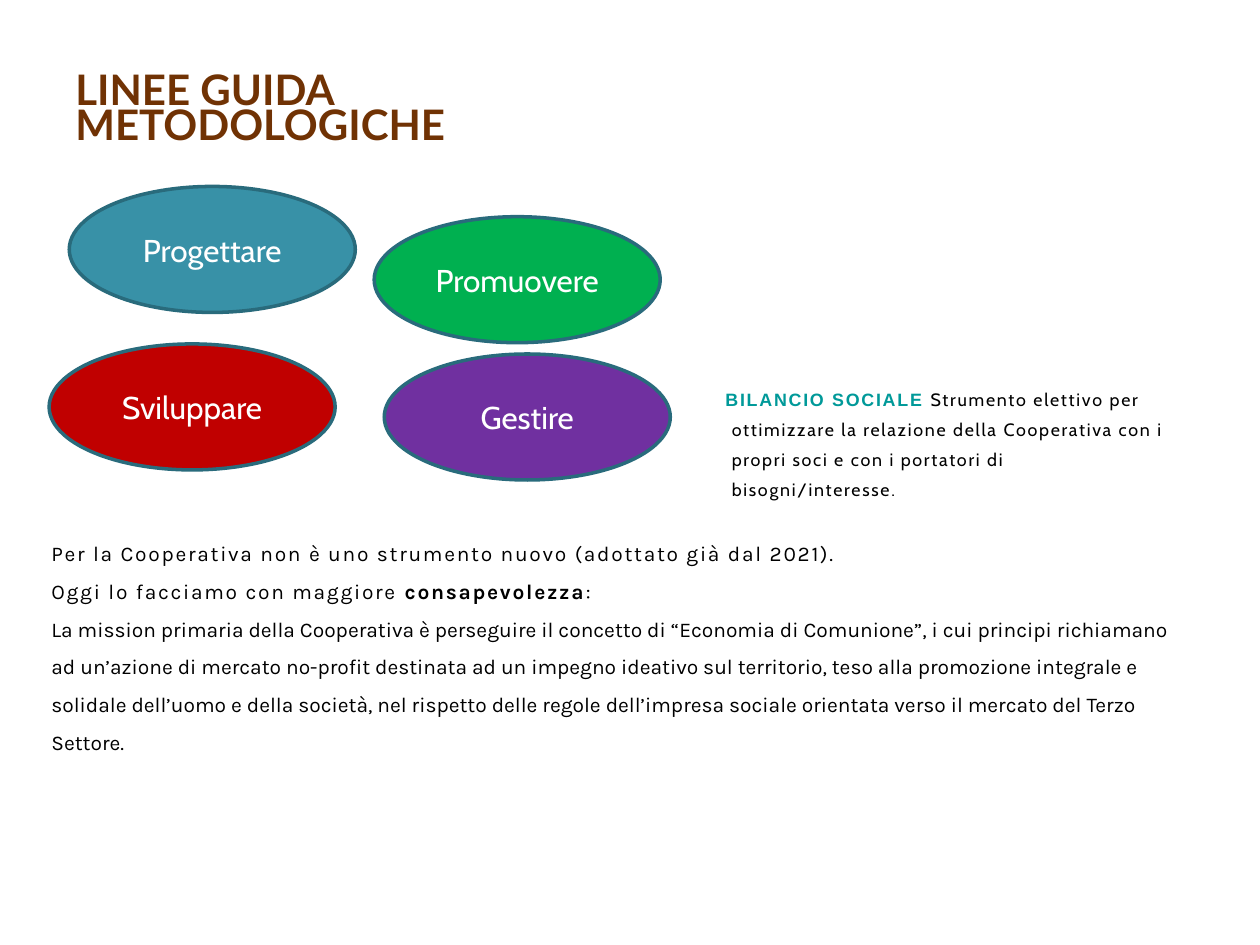
import pptx
import pptx.dml.color
import pptx.enum.shapes
import pptx.enum.text
import pptx.util

COLORS = {
    "title": "703204", "accent": "009999", "body": "000000", "label": "FFFFFF",
    "outline": "296B7C", "blue": "3891A7", "green": "00B050",
    "red": "C00000", "purple": "7030A0",
}
WIDTH, HEIGHT = 10, 7.5
COLUMNS, ROWS = 100, 75
OVAL_SIZE = (22.7, 10)

OVALS = [
    ("Promuovere", "green", 29.7, 17.2),
    ("Progettare", "blue", 5.5, 14.8),
    ("Sviluppare", "red", 3.9, 27.3),
    ("Gestire", "purple", 30.5, 28.1),
]
TITLE = [[("LINEE GUIDA METODOLOGICHE", {})]]
REPORT = [[
    ("BILANCIO SOCIALE ", {"font": "Arial", "color": "accent", "bold": True}),
    ("Strumento elettivo per ottimizzare la relazione della Cooperativa con i "
     "propri soci e con i portatori di bisogni/interesse.", {}),
]]
MISSION = [
    [("Per la Cooperativa non è uno strumento nuovo (adottato già dal 2021).",
      {"spacing": 1})],
    [("Oggi lo facciamo con maggiore ", {"spacing": 1}),
     ("consapevolezza", {"spacing": 1, "bold": True}),
     (":", {"spacing": 1})],
    [("La mission primaria della Cooperativa è perseguire il concetto di "
      "“Economia di Comunione”, i cui principi richiamano ad un’azione di mercato "
      "no-profit destinata ad un impegno ideativo sul territorio, teso alla "
      "promozione integrale e solidale dell’uomo e della società, nel rispetto "
      "delle regole dell’impresa sociale orientata verso il mercato del Terzo "
      "Settore.", {})],
]


def grid_box(left, top, width, height):
    column, row = WIDTH / COLUMNS, HEIGHT / ROWS
    return [pptx.util.Inches(length) for length in
            (left * column, top * row, width * column, height * row)]


def color(name):
    return pptx.dml.color.RGBColor.from_string(COLORS[name])


def format_run(run, font, size, color_name, bold=False, spacing=0):
    run.font.name = font
    run.font.size = pptx.util.Pt(size)
    run.font.bold = bold
    run.font.color.rgb = color(color_name)
    if spacing:
        run._r.get_or_add_rPr().set("spc", str(spacing * 100))


def write_text(shape, paragraphs, *, font, size, color="body", bold=False,
               spacing=0, anchor="TOP", align="LEFT", line_spacing=1.0,
               space_before=0, margin=0, indent=0, bottom_inset=0.05):
    frame = shape.text_frame
    frame.word_wrap = True
    frame.vertical_anchor = getattr(pptx.enum.text.MSO_ANCHOR, anchor)
    frame.margin_bottom = pptx.util.Inches(bottom_inset)
    for index, runs in enumerate(paragraphs):
        paragraph = frame.add_paragraph() if index else frame.paragraphs[0]
        paragraph.alignment = getattr(pptx.enum.text.PP_ALIGN, align)
        paragraph.line_spacing = line_spacing
        paragraph.space_before = pptx.util.Pt(space_before)
        if margin:
            properties = paragraph._p.get_or_add_pPr()
            properties.set("marL", str(pptx.util.Inches(margin)))
            properties.set("indent", str(pptx.util.Inches(indent)))
        for text, changes in runs:
            run = paragraph.add_run()
            run.text = text
            style = {"font": font, "size": size, "color": color,
                     "bold": bold, "spacing": spacing, **changes}
            format_run(run, style["font"], style["size"], style["color"],
                       style["bold"], style["spacing"])


def add_oval(slide, label, fill, left, top):
    shape = slide.shapes.add_shape(
        pptx.enum.shapes.MSO_SHAPE.OVAL, *grid_box(left, top, *OVAL_SIZE))
    shape.shadow.inherit = False
    shape.fill.solid()
    shape.fill.fore_color.rgb = color(fill)
    shape.line.color.rgb = color("outline")
    shape.line.width = pptx.util.Pt(2)
    write_text(shape, [[(label, {})]], font="Cabin", size=18, color="label",
               anchor="MIDDLE", align="CENTER")


def main():
    presentation = pptx.Presentation()
    presentation.slide_width = pptx.util.Inches(WIDTH)
    presentation.slide_height = pptx.util.Inches(HEIGHT)
    slide = presentation.slides.add_slide(presentation.slide_layouts[6])

    title = slide.shapes.add_textbox(*grid_box(5, 2.4, 41.7, 12.7))
    write_text(title, TITLE, font="Lato", size=24, color="title", bold=True,
               anchor="BOTTOM", line_spacing=pptx.util.Pt(20), bottom_inset=0.33)
    report = slide.shapes.add_textbox(*grid_box(53.1, 29.7, 40.7, 10.3))
    write_text(report, REPORT, font="Cabin", size=10.2, spacing=1,
               line_spacing=1.4, space_before=6, margin=0.4, indent=-0.05)
    mission = slide.shapes.add_textbox(*grid_box(3.1, 41.4, 91.4, 21.9))
    write_text(mission, MISSION, font="Karla", size=12, line_spacing=1.5)
    for oval in OVALS:
        add_oval(slide, *oval)

    presentation.save("out.pptx")


if __name__ == "__main__":
    main()
